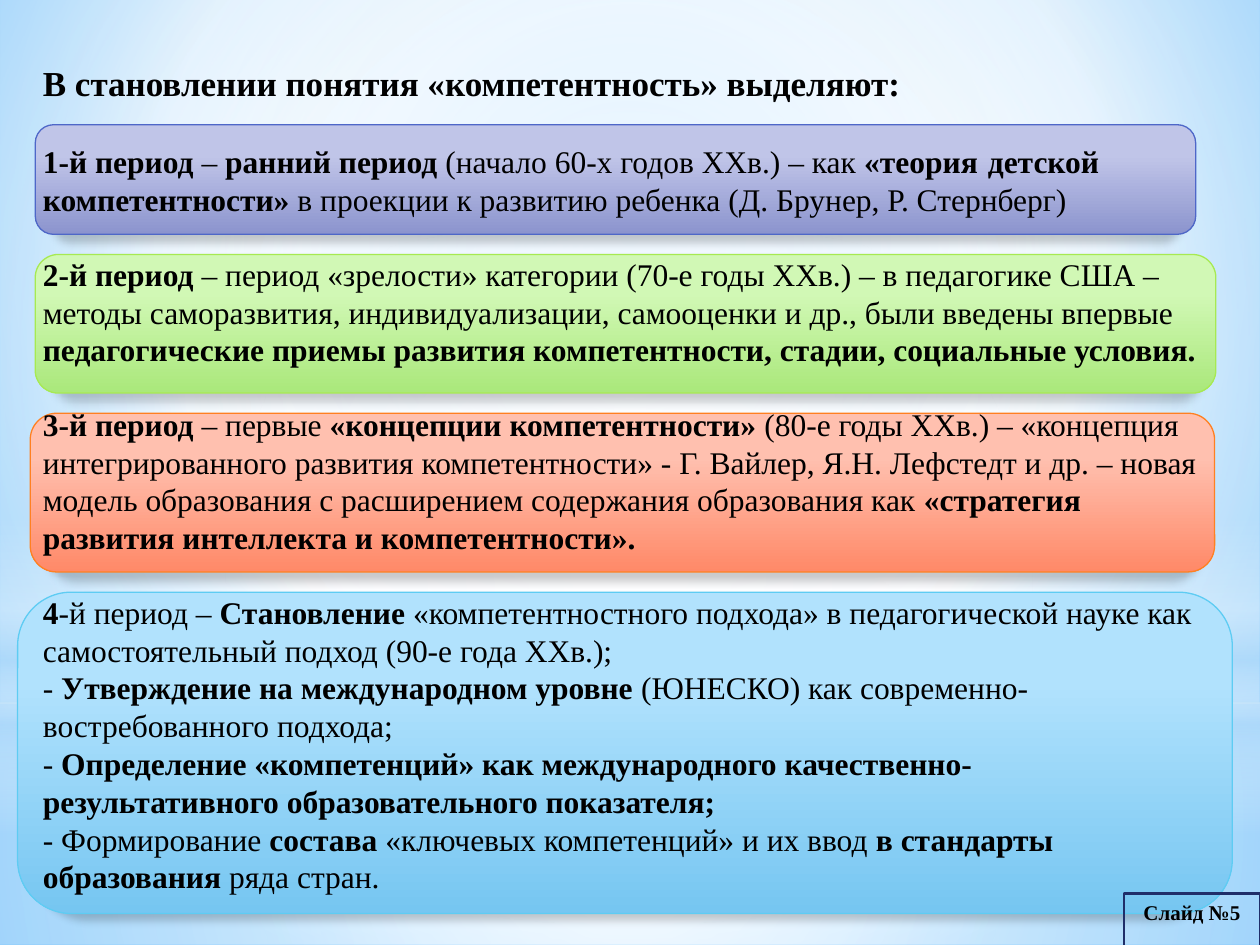
from dataclasses import dataclass

from lxml.etree import SubElement
from pptx import Presentation
from pptx.dml.color import RGBColor
from pptx.enum.shapes import MSO_SHAPE
from pptx.enum.text import MSO_ANCHOR, MSO_AUTO_SIZE, PP_ALIGN
from pptx.oxml import parse_xml
from pptx.oxml.ns import nsdecls, qn
from pptx.util import Inches, Pt

COLUMNS, ROWS = 100, 75
CENTRE = (50, 50, 50, 50)


@dataclass(frozen=True)
class Theme:
    font: str = "Times New Roman"
    ink: str = "000000"
    frame: str = "1F2E69"
    title_size: int = 20
    body_size: int = 18
    tag_size: int = 12
    gap: int = 21
    # Gradient stops: position, colour, opacity (all in percent)
    backdrop: tuple = ((0, "9ED5FF", 100), (60, "FFFFFF", 100), (100, "5BB9FF", 100))
    lower_haze: tuple = ((0, "FFFFFF", 91), (37, "FFFFFF", 76), (100, "B4DCFA", 79))
    upper_haze: tuple = ((0, "FFFFFF", 89), (48, "FFFFFF", 62), (100, "B4DCFA", 79))
    horizon: tuple = ((0, "FFFFFF", 0), (29, "FFFFFF", 30), (45, "B4DCFA", 40),
                      (55, "FFFFFF", 26), (65, "B4DCFA", 60), (100, "FFFFFF", 0))
    glow: tuple = ((0, "FFFFFF", 100), (56, "FFFFFF", 0))
    # Panel colours: top, bottom, outline
    blue: tuple = ("B1E2FD", "76C6F1", "5ECCF3")
    green: tuple = ("D1F8B5", "AAE87B", "A7EA52")
    red: tuple = ("FFC0AF", "FF8968", "FF8021")
    violet: tuple = ("C0C5E8", "8C94CE", "4E67C8")


TITLE = "В становлении понятия «компетентность» выделяют:"

# Paragraphs of each period; ** switches bold on and off
PERIODS = [
    ["**1-й период** – **ранний период** (начало 60-х годов XXв.) – как "
     "**«теория\tдетской компетентности»** в проекции к развитию ребенка "
     "(Д. Брунер, Р. Стернберг)"],
    ["**2-й период** – период «зрелости» категории (70-е годы XXв.) – в педагогике США – "
     "методы саморазвития, индивидуализации, самооценки и др., были введены впервые "
     "**педагогические приемы развития компетентности, стадии, социальные условия.**"],
    ["**3-й период** – первые **«концепции компетентности»** (80-е годы ХХв.) – «концепция "
     "интегрированного развития компетентности» - Г. Вайлер, Я.Н. Лефстедт и др. – новая "
     "модель образования с расширением содержания образования как "
     "**«стратегия развития интеллекта и компетентности».**"],
    ["**4**-й период – **Становление** «компетентностного подхода» в педагогической науке "
     "как самостоятельный подход (90-е года ХХв.);",
     "- **Утверждение на международном уровне** (ЮНЕСКО) как "
     "современно-востребованного подхода;",
     "- **Определение «компетенций» как международного "
     "качественно-результативного образовательного показателя;**",
     "- Формирование **состава** «ключевых компетенций» и их ввод "
     "**в стандарты образования** ряда стран."],
]


class PageBuilder:
    def __init__(self, deck, theme):
        self.theme = theme
        self.column = deck.slide_width / COLUMNS
        self.row = deck.slide_height / ROWS
        self.page = deck.slides.add_slide(deck.slide_layouts[1])

    def frame(self, at):
        """Turn (column, row, columns, rows) into slide lengths."""
        left, top, width, height = at
        return (int(left * self.column), int(top * self.row),
                int(width * self.column), int(height * self.row))

    def gradient(self, fill, owner, stops, centre=None):
        """Fill owner with a gradient: radial around centre, else top to bottom."""
        fill.solid()
        marks = "".join(
            f'<a:gs pos="{pos * 1000}"><a:srgbClr val="{colour}">'
            f'<a:alpha val="{opacity * 1000}"/></a:srgbClr></a:gs>'
            for pos, colour, opacity in stops)
        if centre:
            sides = " ".join(f'{side}="{share * 1000}"' for side, share in zip("ltrb", centre))
            direction = f'<a:path path="circle"><a:fillToRect {sides}/></a:path>'
        else:
            direction = '<a:lin ang="5400000" scaled="0"/>'
        solid = owner.find(qn("a:solidFill"))
        owner.replace(solid, parse_xml(
            f'<a:gradFill {nsdecls("a")} rotWithShape="1">'
            f'<a:gsLst>{marks}</a:gsLst>{direction}</a:gradFill>'))

    def background(self, stops, centre):
        fill = self.page.background.fill
        fill.solid()
        owner = next(self.page.element.iter(qn("p:bgPr")))
        self.gradient(fill, owner, stops, centre)

    def shape(self, kind, at, line=None, weight=0.75):
        box = self.page.shapes.add_shape(kind, *self.frame(at))
        box.shadow.inherit = False
        if line:
            box.line.color.rgb = RGBColor.from_string(line)
            box.line.width = Pt(weight)
        else:
            box.line.fill.background()
        return box

    def haze(self, kind, at, stops, centre=None):
        box = self.shape(kind, at)
        self.gradient(box.fill, box.element.spPr, stops, centre)

    def panel(self, at, colours):
        top, bottom, outline = colours
        box = self.shape(MSO_SHAPE.ROUNDED_RECTANGLE, at, outline)
        self.gradient(box.fill, box.element.spPr, ((28, top, 100), (100, bottom, 100)))
        effects = box.element.spPr.find(qn("a:effectLst"))
        effects.append(parse_xml(
            f'<a:outerShdw {nsdecls("a")} blurRad="{Pt(5)}" dist="{Pt(4)}" dir="5400000" '
            f'sx="97000" algn="ctr" rotWithShape="0"><a:srgbClr val="{self.theme.ink}">'
            '<a:alpha val="20000"/></a:srgbClr></a:outerShdw>'))

    def style(self, para, size):
        for span in para.runs:
            span.font.name = self.theme.font
            span.font.size = Pt(size)
            span.font.color.rgb = RGBColor.from_string(self.theme.ink)

    def tag(self, at, text):
        box = self.shape(MSO_SHAPE.RECTANGLE, at, self.theme.frame, 1.5)
        box.fill.background()
        frame = box.text_frame
        frame.text = text
        frame.vertical_anchor = MSO_ANCHOR.TOP
        frame.margin_top = Inches(0.02)
        para = frame.paragraphs[0]
        para.alignment = PP_ALIGN.CENTER
        para.line_spacing = 1.15
        para.font.bold = True
        self.style(para, self.theme.tag_size)
        para.runs[0].font.bold = True

    def placeholder(self, index, at):
        """Move a placeholder into place, in front of the panels."""
        box = self.page.placeholders[index]
        box.left, box.top, box.width, box.height = self.frame(at)
        box.element.getparent().append(box.element)
        frame = box.text_frame
        frame.word_wrap = True
        frame.auto_size = MSO_AUTO_SIZE.NONE
        frame.vertical_anchor = MSO_ANCHOR.TOP
        return frame

    def title(self, at, text):
        frame = self.placeholder(0, at)
        frame.text = text
        para = frame.paragraphs[0]
        para.alignment = PP_ALIGN.LEFT
        self.style(para, self.theme.title_size)
        para.runs[0].font.bold = True

    def body(self, at, groups, tab):
        frame = self.placeholder(1, at)
        lines = [(text, number > 0 and place == 0)
                 for number, group in enumerate(groups) for place, text in enumerate(group)]
        for number, (text, starts_group) in enumerate(lines):
            para = frame.paragraphs[0] if number == 0 else frame.add_paragraph()
            for place, piece in enumerate(text.split("**")):
                if piece:
                    span = para.add_run()
                    span.text = piece
                    span.font.bold = place % 2 == 1
            self.style(para, self.theme.body_size)
            para.alignment = PP_ALIGN.LEFT
            para.space_before = Pt(self.theme.gap if starts_group else 0)
            settings = para._p.get_or_add_pPr()
            settings.set("marL", "0")
            settings.set("indent", "0")
            SubElement(settings, qn("a:buNone"))
            if "\t" in text:
                tabs = SubElement(settings, qn("a:tabLst"))
                SubElement(tabs, qn("a:tab"), pos=str(int(tab * self.column)), algn="l")


def main():
    deck = Presentation()
    deck.slide_width, deck.slide_height = Inches(10), Inches(7.5)
    theme = Theme()
    page = PageBuilder(deck, theme)

    page.background(theme.backdrop, (20, 10, 20, 60))
    page.haze(MSO_SHAPE.RECTANGLE, (0, 55.8, 100, 19.2), theme.lower_haze, CENTRE)
    page.haze(MSO_SHAPE.RECTANGLE, (0, 0, 100, 55.8), theme.upper_haze, CENTRE)
    page.haze(MSO_SHAPE.RECTANGLE, (0, 41.2, 100, 25), theme.horizon)
    page.haze(MSO_SHAPE.OVAL, (0, 17.5, 100, 55.8), theme.glow, CENTRE)

    page.panel((1.4, 47, 96.4, 25.5), theme.blue)
    page.panel((2.8, 20.2, 93.7, 11), theme.green)
    page.panel((2.4, 32.8, 94, 12.6), theme.red)
    page.panel((2.8, 9.9, 92.1, 8.7), theme.violet)

    page.tag((89.2, 70.9, 10.8, 4.5), "Слайд №5")
    page.title((2.4, 4.4, 94, 4.5), TITLE)
    page.body((2.4, 10.8, 94, 61.6), PERIODS, tab=81.1)
    deck.save("out.pptx")


if __name__ == "__main__":
    main()
